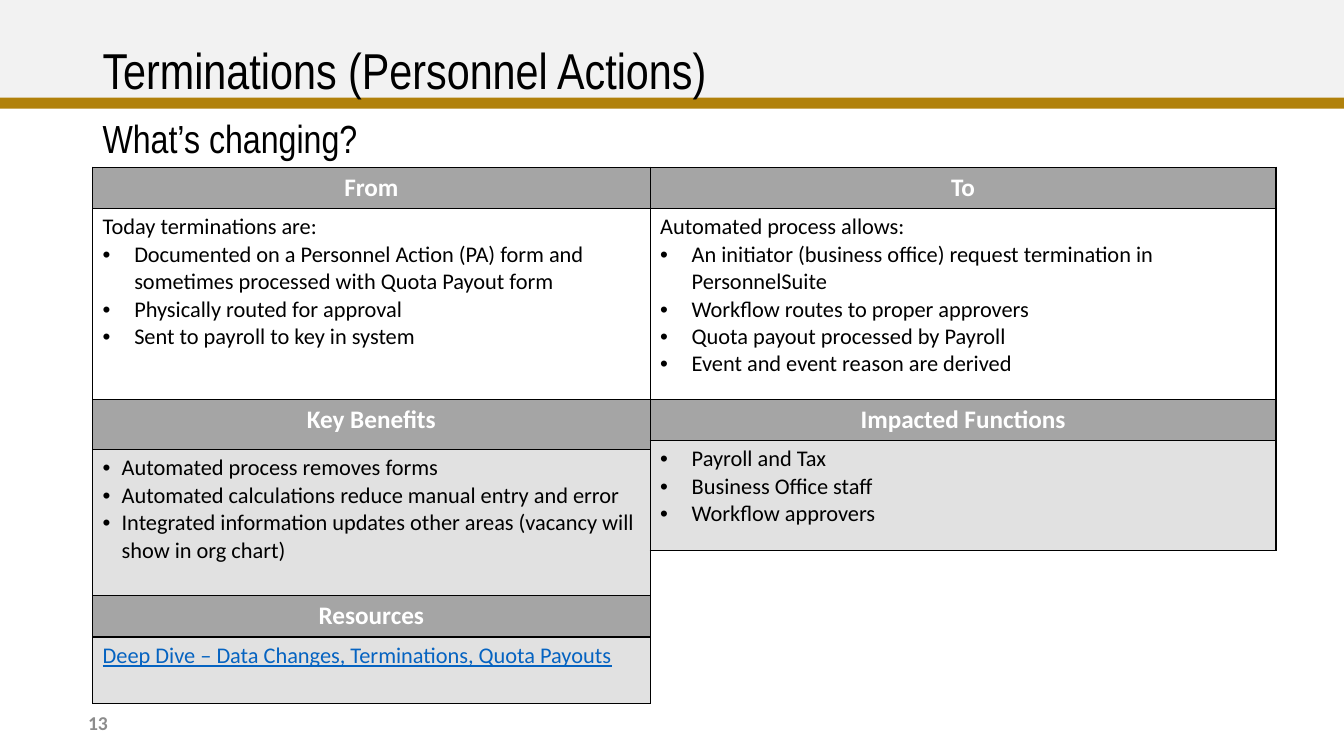
from lxml.etree import SubElement
from pptx import Presentation
from pptx.dml.color import RGBColor
from pptx.enum.shapes import MSO_SHAPE as Shape
from pptx.enum.text import MSO_ANCHOR as Anchor, PP_ALIGN as Align
from pptx.oxml.ns import qn
from pptx.util import Pt

BLACK, WHITE, GREY, PALE, BLUE = "000000", "FFFFFF", "A5A5A5", "E1E1E1", "0563C1"
LEFT, MIDDLE, RIGHT = 66.2, 464.4, 911.5
TOP, BENEFITS_TOP, RESOURCES_TOP, BOTTOM = 119.5, 285.1, 425.5, 502.4
HEADER, WIDE_INDENT, NARROW_INDENT = 29.5, 22.5, 13.5


def color(value):
    return RGBColor.from_string(value)


class TerminationsSlide:
    """Holds the slide and the style of its bands, texts and tables."""

    def __init__(self, presentation):
        self.slide = presentation.slides.add_slide(presentation.slide_layouts[6])
        self.heading_font = "Arial Narrow"
        self.body_font = "Calibri"

    def band(self, top, width, height, fill):
        shape = self.slide.shapes.add_shape(
            Shape.RECTANGLE, Pt(0), Pt(top), Pt(width), Pt(height))
        shape.shadow.inherit = False
        shape.fill.solid()
        shape.fill.fore_color.rgb = color(fill)
        shape.line.fill.background()

    def run(self, paragraph, text, size, ink, font, bold=False, underline=False):
        run = paragraph.add_run()
        run.text = text
        run.font.name = font
        run.font.size = Pt(size)
        run.font.bold = bold
        run.font.underline = underline
        run.font.color.rgb = color(ink)

    def text(self, box, text, size, font, ink=BLACK, anchor=Anchor.MIDDLE,
             align=Align.LEFT, bold=False, spacing=0.9):
        shape = self.slide.shapes.add_textbox(*map(Pt, box))
        frame = shape.text_frame
        frame.word_wrap = True
        frame.vertical_anchor = anchor
        paragraph = frame.paragraphs[0]
        paragraph.alignment = align
        paragraph.line_spacing = spacing
        self.run(paragraph, text, size, ink, font, bold)

    def bullet(self, paragraph, indent):
        properties = paragraph._p.get_or_add_pPr()
        properties.set("marL", str(Pt(indent)))
        properties.set("indent", str(-Pt(indent)))
        SubElement(properties, qn("a:buFont"), typeface="Arial")
        SubElement(properties, qn("a:buChar"), char="•")

    def cell(self, cell, fill):
        properties = cell._tc.get_or_add_tcPr()
        for side in ("lnL", "lnR", "lnT", "lnB"):
            line = SubElement(properties, qn(f"a:{side}"), w=str(Pt(1)))
            solid = SubElement(line, qn("a:solidFill"))
            SubElement(solid, qn("a:srgbClr"), val=BLACK)
        cell.fill.solid()
        cell.fill.fore_color.rgb = color(fill)

    def table(self, left, top, right, bottom, columns, header=HEADER, fill=PALE,
              indent=WIDE_INDENT, divider=None):
        edges = [left, divider, right] if divider else [left, right]
        frame = self.slide.shapes.add_table(
            2, len(columns), Pt(left), Pt(top), Pt(right - left), Pt(bottom - top))
        table = frame.table
        table.first_row = table.horz_banding = False
        table.rows[0].height = Pt(header)
        table.rows[1].height = Pt(bottom - top - header)
        for index, (title, intro, ink, items) in enumerate(columns):
            table.columns[index].width = Pt(edges[index + 1] - edges[index])
            title_cell, body_cell = table.cell(0, index), table.cell(1, index)
            self.cell(title_cell, GREY)
            self.cell(body_cell, fill)
            paragraph = title_cell.text_frame.paragraphs[0]
            paragraph.alignment = Align.CENTER
            self.run(paragraph, title, 18, WHITE, self.body_font, bold=True)
            frame = body_cell.text_frame
            lines = [(intro, False)] if intro else []
            lines += [(item, True) for item in items]
            for number, (line, bulleted) in enumerate(lines):
                paragraph = frame.add_paragraph() if number else frame.paragraphs[0]
                if bulleted:
                    self.bullet(paragraph, indent)
                self.run(paragraph, line, 16, ink, self.body_font,
                         underline=ink == BLUE)


def main():
    presentation = Presentation()
    presentation.slide_width, presentation.slide_height = Pt(960), Pt(540)
    page = TerminationsSlide(presentation)

    page.band(0, 960, 76.3, "F2F2F2")
    page.band(69.8, 960, 7.9, "B1810B")
    page.text((LEFT, 28.8, 828, 47.5), "Terminations (Personnel Actions)", 36,
              page.heading_font)
    page.text((LEFT, 82.1, 828, 28.8), "What’s changing?", 28,
              page.heading_font, anchor=Anchor.TOP)
    page.text((48.2, 501.8, 36, 28.8), "13", 14, page.body_font, ink="8C8C8C",
              align=Align.RIGHT, bold=True, spacing=1.0)

    page.table(LEFT, TOP, RIGHT, BENEFITS_TOP, [
        ("From", "Today terminations are:", BLACK, [
            "Documented on a Personnel Action (PA) form and sometimes processed "
            "with Quota Payout form",
            "Physically routed for approval",
            "Sent to payroll to key in system"]),
        ("To", "Automated process allows:", BLACK, [
            "An initiator (business office) request termination in PersonnelSuite",
            "Workflow routes to proper approvers",
            "Quota payout processed by Payroll",
            "Event and event reason are derived"]),
    ], fill=WHITE, divider=MIDDLE)
    page.table(LEFT, BENEFITS_TOP, MIDDLE, RESOURCES_TOP, [
        ("Key Benefits", "", BLACK, [
            "Automated process removes forms",
            "Automated calculations reduce manual entry and error",
            "Integrated information updates other areas (vacancy will show in "
            "org chart)"]),
    ], header=36, indent=NARROW_INDENT)
    page.table(MIDDLE, BENEFITS_TOP, RIGHT, 393.1, [
        ("Impacted Functions", "", BLACK, [
            "Payroll and Tax", "Business Office staff", "Workflow approvers"]),
    ])
    page.table(LEFT, RESOURCES_TOP, MIDDLE, BOTTOM, [
        ("Resources", "Deep Dive – Data Changes, Terminations, Quota Payouts",
         BLUE, []),
    ])
    presentation.save("out.pptx")


if __name__ == "__main__":
    main()
